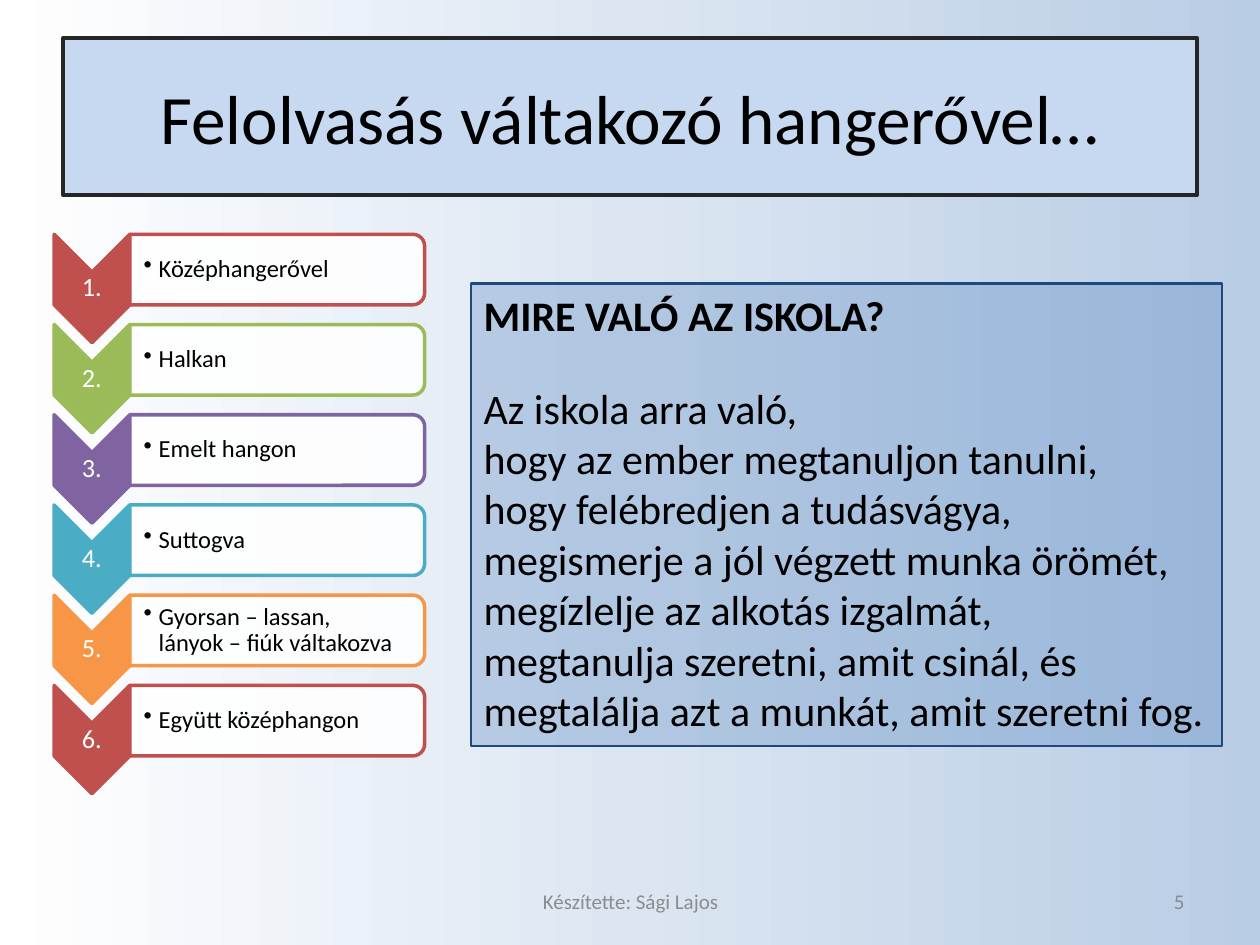
"""Build the slide on reading aloud at changing volume."""
from copy import deepcopy

from lxml import etree
from pptx import Presentation
from pptx.dml.color import RGBColor
from pptx.enum.shapes import MSO_SHAPE
from pptx.enum.text import MSO_ANCHOR, MSO_AUTO_SIZE, PP_ALIGN
from pptx.oxml.ns import qn
from pptx.util import Inches, Pt

LEFT, MID, RIGHT = PP_ALIGN.LEFT, PP_ALIGN.CENTER, PP_ALIGN.RIGHT
TOP, CENTER = MSO_ANCHOR.TOP, MSO_ANCHOR.MIDDLE
NONE, GROW = MSO_AUTO_SIZE.NONE, MSO_AUTO_SIZE.SHAPE_TO_FIT_TEXT
RECT, CHEVRON = MSO_SHAPE.RECTANGLE, MSO_SHAPE.CHEVRON
CARD = MSO_SHAPE.ROUND_2_SAME_RECTANGLE

COLORS = {
    "black": "000000", "white": "FFFFFF", "gray": "8C8C8C",
    "sky": "C6D9F1", "ink": "262626", "blue": "4F81BD", "navy": "1F497D",
    "red": "C0504D", "green": "9BBB59", "purple": "8064A2",
    "aqua": "4BACC6", "orange": "F79646",
}
STOPS = [(0, "FFFFFF"), (50, "DCE6F2"), (100, "B9CDE5")]
TITLE = "Felolvasás váltakozó hangerővel…"
STEPS = [
    ("Középhangerővel", "red"),
    ("Halkan", "green"),
    ("Emelt hangon", "purple"),
    ("Suttogva", "aqua"),
    ("Gyorsan – lassan,\nlányok – fiúk váltakozva", "orange"),
    ("Együtt középhangon", "red"),
]
HEAD = "MIRE VALÓ AZ ISKOLA?"
POEM = [
    "Az iskola arra való,",
    "hogy az ember megtanuljon tanulni,",
    "hogy felébredjen a tudásvágya,",
    "megismerje a jól végzett munka örömét,",
    "megízlelje az alkotás izgalmát,",
    "megtanulja szeretni, amit csinál, és",
    "megtalálja azt a munkát, amit szeretni fog.",
]
FOOT = [
    ("Készítette: Sági Lajos", (3.42, 6.95, 3.17, 0.4), MID),
    ("5", (7.17, 6.95, 2.33, 0.4), RIGHT),
]
FIRST, PITCH = 1.86, 0.716


def rgb(name):
    return RGBColor.from_string(COLORS[name])


def paint(shape, fill, line, width, alpha=None):
    shape.fill.solid()
    shape.fill.fore_color.rgb = rgb(fill)
    shape.line.color.rgb = rgb(line)
    shape.line.width = Pt(width)
    if alpha:
        tone = shape._element.spPr.find(qn("a:solidFill"))[0]
        etree.SubElement(tone, qn("a:alpha"), val=str(alpha * 1000))


def draw(slide, kind, box, fill, line, width, alpha=None, turn=0):
    shape = slide.shapes.add_shape(kind, *map(Inches, box))
    shape.rotation = turn
    shape.shadow.inherit = False
    paint(shape, fill, line, width, alpha)
    return shape


def write(shape, lines, size, color="black", align=LEFT, anchor=CENTER,
          pad=(0.1, 0.05, 0.1, 0.05), space=None, bullet=False,
          bold=(), after=0, fit=NONE):
    frame = shape.text_frame
    frame.word_wrap = True
    frame.auto_size = fit
    frame.vertical_anchor = anchor
    (frame.margin_left, frame.margin_top,
     frame.margin_right, frame.margin_bottom) = map(Inches, pad)
    for i, text in enumerate(lines):
        para = frame.add_paragraph() if i else frame.paragraphs[0]
        para.text = text
        para.alignment = align
        if space:
            para.line_spacing = space
        if i in bold:
            para.space_after = Pt(after)
        for run in para.runs:
            font = run.font
            font.name, font.size, font.bold = "Calibri", Pt(size), i in bold
            font.color.rgb = rgb(color)
        for gap in para._p.findall(qn("a:br")):
            gap.append(deepcopy(para.runs[0]._r.rPr))
        if bullet:
            prop = para._p.get_or_add_pPr()
            prop.set("marL", str(Inches(0.12)))
            prop.set("indent", str(-Inches(0.12)))
            etree.SubElement(prop, qn("a:buChar"), char="•")


def label(slide, box, text, size, **look):
    write(slide.shapes.add_textbox(*map(Inches, box)), [text], size, **look)


def shade(slide):
    fill = slide.background.fill
    fill.gradient()
    fill.gradient_angle = 0
    stops = next(slide._element.iter(qn("a:gsLst")))
    stops.clear()
    for pos, tone in STOPS:
        stop = etree.SubElement(stops, qn("a:gs"), pos=str(pos * 1000))
        etree.SubElement(stop, qn("a:srgbClr"), val=tone)


def step(slide, i, text, color):
    top = FIRST + i * PITCH
    draw(slide, CHEVRON, (0.3, top + 0.13, 0.86, 0.6), color, color, 2, turn=90)
    label(slide, (0.43, top + 0.3, 0.6, 0.26), f"{i + 1}.", 15, color="white",
          align=MID, pad=(0.01,) * 4, space=0.9)
    draw(slide, CARD, (1.92, top - 0.89, 0.56, 2.34), "white", color, 2,
         alpha=90, turn=90)
    label(slide, (1.03, top + 0.03, 2.31, 0.5), text, 14,
          pad=(0.11, 0.01, 0.01, 0.01), space=0.9, bullet=True)


def main():
    deck = Presentation()
    deck.slide_width, deck.slide_height = Inches(10), Inches(7.5)
    slide = deck.slides.add_slide(deck.slide_layouts[5])
    shade(slide)
    title = slide.shapes.title
    title.left, title.top = Inches(0.5), Inches(0.3)
    title.width, title.height = Inches(9), Inches(1.25)
    paint(title, "sky", "ink", 2)
    write(title, [TITLE], 39.6, align=MID)
    for text, box, align in FOOT:
        label(slide, box, text, 12, color="gray", align=align)
    poem = draw(slide, RECT, (3.74, 2.25, 5.96, 3.67), "blue", "navy", 1.25,
                alpha=30)
    write(poem, [HEAD] + POEM, 24, anchor=TOP, bold=(0,), after=24, fit=GROW)
    for i, (text, color) in enumerate(STEPS):
        step(slide, i, text, color)
    deck.save("out.pptx")


if __name__ == "__main__":
    main()
